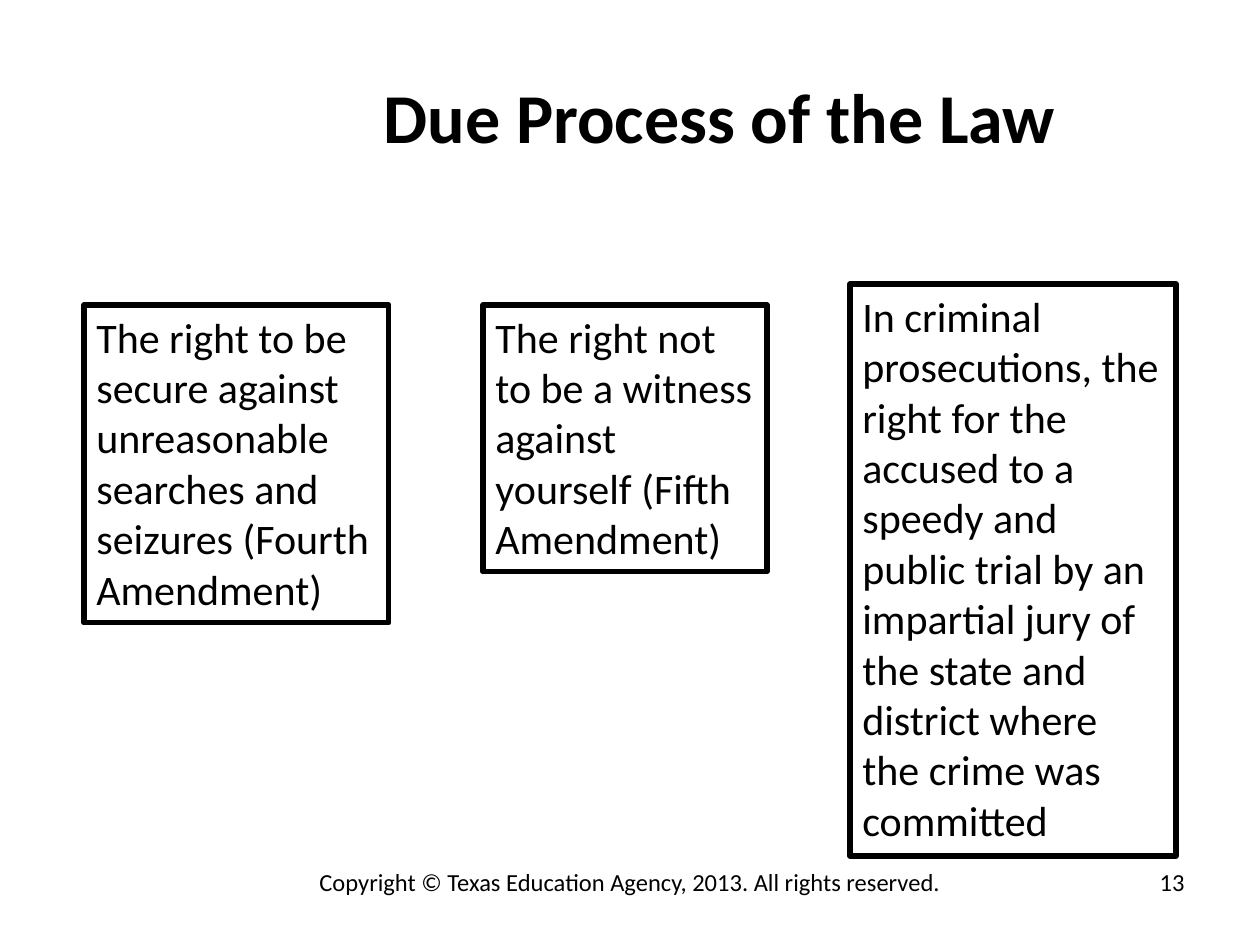
from pptx import Presentation
from pptx import util as u
from pptx.dml import color
from pptx.enum import shapes, text

EMU_PER_PX = 914400 // 126
COLORS = {"ink": "000000", "paper": "FFFFFF"}


def px(length):
    return u.Emu(length * EMU_PER_PX)


def rgb(name):
    return color.RGBColor.from_string(COLORS[name])


class SlideBuilder:
    font = "Calibri"

    def __init__(self, slide):
        self.slide = slide
        fill = slide.background.fill
        fill.solid()
        fill.fore_color.rgb = rgb("paper")

    def set_words(self, frame, words, align, frame_format, **font_format):
        for key, value in {"word_wrap": True, **frame_format}.items():
            setattr(frame, key, value)
        paragraph = frame.paragraphs[0]
        paragraph.alignment = align
        run = paragraph.add_run()
        run.text = words
        for key, value in {"name": self.font, **font_format}.items():
            setattr(run.font, key, value)
        run.font.color.rgb = rgb("ink")

    def label(self, place, words, align, size, bold=False,
              anchor=text.MSO_ANCHOR.TOP):
        box = self.slide.shapes.add_textbox(*map(px, place))
        self.set_words(box.text_frame, words, align,
                       {"vertical_anchor": anchor},
                       size=u.Pt(size), bold=bold)

    def right_box(self, place, words):
        box = self.slide.shapes.add_shape(
            shapes.MSO_SHAPE.RECTANGLE, *map(px, place))
        box.shadow.inherit = False
        box.fill.background()
        box.line.color.rgb = rgb("ink")
        box.line.width = u.Pt(3)
        frame_format = {"vertical_anchor": text.MSO_ANCHOR.TOP,
                        "auto_size": text.MSO_AUTO_SIZE.SHAPE_TO_FIT_TEXT}
        self.set_words(box.text_frame, words, text.PP_ALIGN.LEFT,
                       frame_format, size=u.Pt(24))


RIGHTS = [
    ((84, 305, 305, 318),
     "The right to be secure against unreasonable searches and seizures "
     "(Fourth Amendment)"),
    ((483, 305, 284, 267),
     "The right not to be a witness against yourself (Fifth Amendment)"),
    ((850, 284, 326, 572),
     "In criminal prosecutions, the right for the accused to a speedy and "
     "public trial by an impartial jury of the state and district where the "
     "crime was committed"),
]


def main():
    deck = Presentation()
    deck.slide_width, deck.slide_height = u.Inches(10), u.Inches(7.5)
    builder = SlideBuilder(deck.slides.add_slide(deck.slide_layouts[6]))
    builder.label((252, 53, 935, 126), "Due Process of the Law",
                  text.PP_ALIGN.CENTER, 40, True, text.MSO_ANCHOR.MIDDLE)
    for place, words in RIGHTS:
        builder.right_box(place, words)
    builder.label((903, 861, 294, 66), "13", text.PP_ALIGN.RIGHT, 14)
    builder.label((252, 861, 756, 66),
                  "Copyright © Texas Education Agency, 2013. All rights reserved.",
                  text.PP_ALIGN.CENTER, 14)
    deck.save("out.pptx")


if __name__ == "__main__":
    main()
